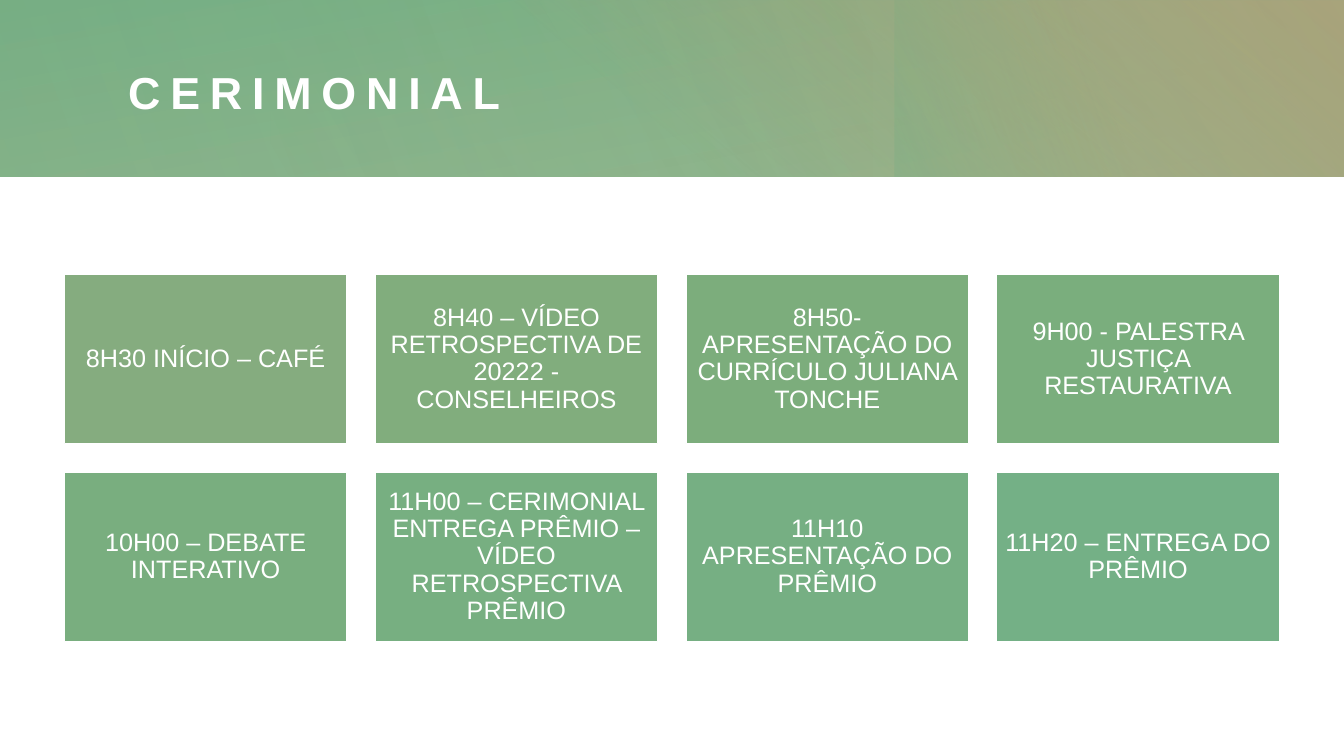
from lxml.etree import SubElement
from pptx import Presentation
from pptx.dml.color import RGBColor as Rgb
from pptx.enum.shapes import MSO_SHAPE as Shp
from pptx.enum.text import MSO_ANCHOR as Anc, MSO_AUTO_SIZE as Fit, PP_ALIGN as Al
from pptx.oxml.ns import qn
from pptx.util import Pt

HUES = {
    "white": "FFFFFF",
    "sage": "85AC7F",
    "lime": "90AA70",
    "mint": "74B086",
    "sand": "B8A17A",
}

# Box, turn, gradient angle (clockwise), stops as (place %, hue, opacity %)
BANDS = [
    ((0, 0, 960, 126), 0, 260, [(0, "sage", 83), (100, "mint", 100)]),
    ((346.5, 0.5, 613.5, 125.5), 0, 310, [(22, "sand", 0), (99, "sand", 100)]),
    ((710.5, -71.5, 126, 269), 270, 250, [(45, "lime", 0), (99, "mint", 33)]),
    ((193.5, 0, 766.5, 126), 180, 330, [(0, "sage", 30), (99, "sage", 0)]),
    ((0, 0, 623, 126), 0, 340, [(0, "sage", 21), (99, "sage", 0)]),
]

CARDS = [
    ("8H30 INÍCIO – CAFÉ", "85AC7F"),
    ("8H40 – VÍDEO RETROSPECTIVA DE 20222 - CONSELHEIROS", "81AD7D"),
    ("8H50- APRESENTAÇÃO DO CURRÍCULO JULIANA TONCHE", "7CAD7C"),
    ("9H00 - PALESTRA JUSTIÇA RESTAURATIVA", "7AAE7D"),
    ("10H00 – DEBATE INTERATIVO", "79AE7F"),
    ("11H00 – CERIMONIAL ENTREGA PRÊMIO – VÍDEO RETROSPECTIVA PRÊMIO", "77AF81"),
    ("11H10 APRESENTAÇÃO DO PRÊMIO", "76AF83"),
    ("11H20 – ENTREGA DO PRÊMIO", "74B086"),
]


def put(item, form):
    for key, val in form.items():
        setattr(item, key, val)


class Deck:
    font = "Arial"

    def __init__(self, wide, high):
        self.prs = Presentation()
        put(self.prs, {"slide_width": Pt(wide), "slide_height": Pt(high)})
        self.page = self.prs.slides.add_slide(self.prs.slide_layouts[5])

    def rect(self, box):
        shape = self.page.shapes.add_shape(Shp.RECTANGLE, *map(Pt, box))
        shape.shadow.inherit = False
        return shape

    def label(self, shape, text, size, align, pad, bold=False):
        frame = shape.text_frame
        frame.text = text
        put(frame, {"word_wrap": True, "auto_size": Fit.NONE,
                    "vertical_anchor": Anc.MIDDLE})
        put(frame, {"margin_" + side: Pt(pad)
                    for side in ("left", "top", "right", "bottom")})
        para = frame.paragraphs[0]
        put(para, {"alignment": align, "line_spacing": 0.9})
        run = para.runs[0]
        put(run.font, {"name": self.font, "size": Pt(size), "bold": bold})
        run.font.color.rgb = Rgb.from_string(HUES["white"])
        return run

    def band(self, box, turn, angle, stops):
        shape = self.rect(box)
        shape.rotation = turn
        shape.line.fill.background()
        fill = shape.fill
        fill.gradient()
        fill.gradient_angle = 360 - angle
        for stop, (place, hue, _) in zip(fill.gradient_stops, stops):
            stop.position = place / 100
            stop.color.rgb = Rgb.from_string(HUES[hue])
        # Opacity of each stop
        tints = shape._element.spPr.iter(qn("a:srgbClr"))
        for tint, (_, _, seen) in zip(tints, stops):
            SubElement(tint, qn("a:alpha")).set("val", str(seen * 1000))

    def title(self, text, box):
        shape = self.page.shapes.title
        put(shape, dict(zip(("left", "top", "width", "height"), map(Pt, box))))
        run = self.label(shape, text, 32, Al.LEFT, 0, bold=True)
        run.font._element.set("spc", "700")
        # Bring the title in front of the bands
        self.page.shapes._spTree.append(shape._element)

    def card(self, text, hue, box):
        shape = self.rect(box)
        shape.fill.solid()
        shape.fill.fore_color.rgb = Rgb.from_string(hue)
        shape.line.color.rgb = Rgb.from_string(HUES["white"])
        shape.line.width = Pt(1)
        self.label(shape, text, 18, Al.CENTER, 5)


def main():
    deck = Deck(960, 540)

    # Header
    for band in BANDS:
        deck.band(*band)
    deck.title("CERIMONIAL", (91.5, 29.5, 817, 76.5))

    # Schedule: four cards a row
    wide, high, gap = 201.8, 121, 20.2
    for spot, (text, hue) in enumerate(CARDS):
        row, col = divmod(spot, 4)
        left = 46 + col * (wide + gap)
        top = 196 + row * (high + gap)
        deck.card(text, hue, (left, top, wide, high))

    deck.prs.save("out.pptx")


if __name__ == "__main__":
    main()
